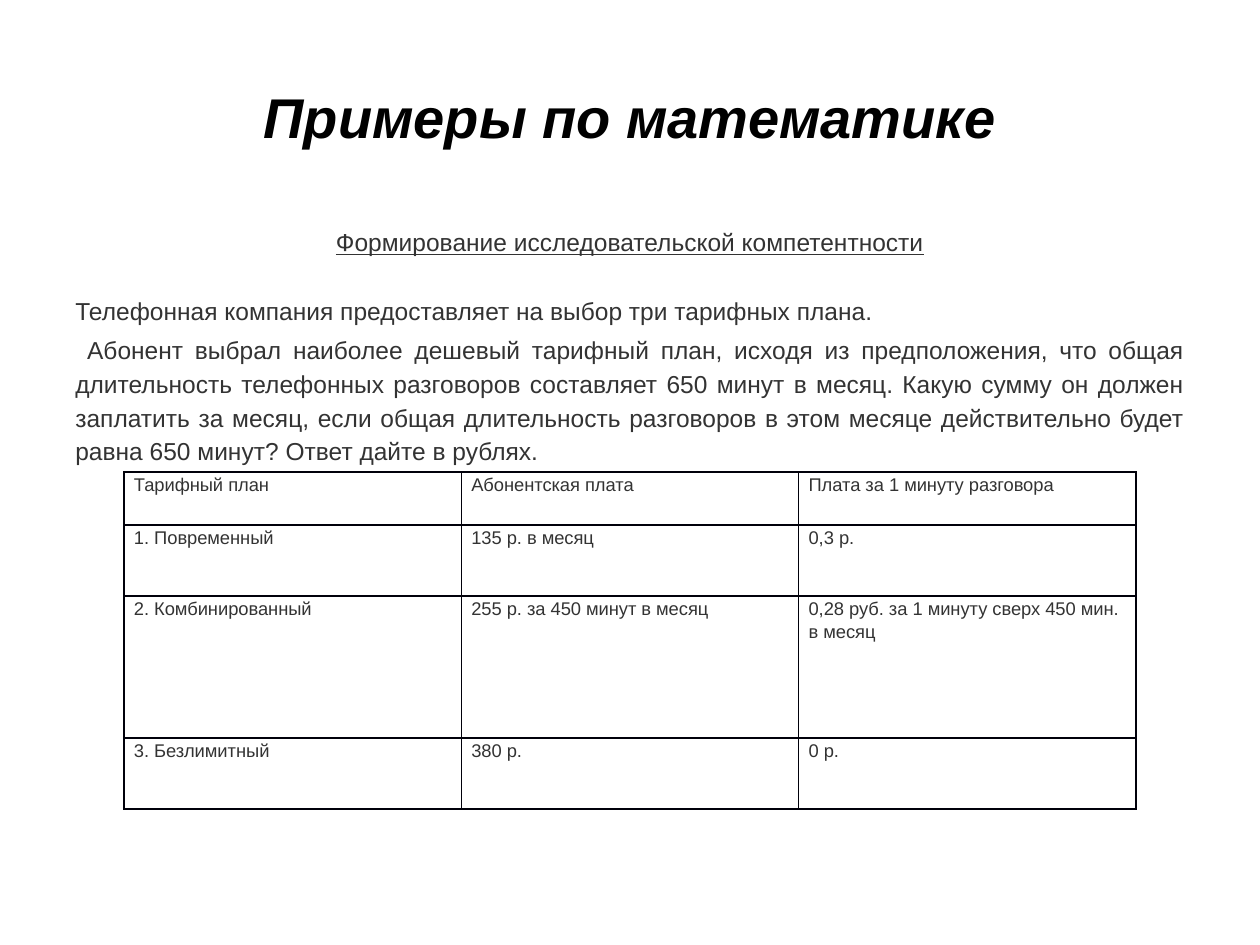
from lxml.etree import SubElement
from pptx import Presentation
from pptx.dml.color import RGBColor
from pptx.enum.text import MSO_ANCHOR, PP_ALIGN as AL
from pptx.oxml.ns import qn
from pptx.util import Pt

SCALE = 914400 / 126
FONT = "Arial"
COLORS = {"title": "000000", "text": "333333", "cell": "FFFFFF", "border": "00000A"}
SUBTITLE = "Формирование исследовательской компетентности"
INTRO = "Телефонная компания предоставляет на выбор три тарифных плана."
TASK = (
    " Абонент выбрал наиболее дешевый тарифный план, исходя из предположения, что общая "
    "длительность телефонных разговоров составляет 650 минут в месяц. Какую сумму он должен "
    "заплатить за месяц, если общая длительность разговоров в этом месяце действительно будет "
    "равна 650 минут? Ответ дайте в рублях."
)
TARIFFS = [
    ("Тарифный план", "Абонентская плата", "Плата за 1 минуту разговора"),
    ("1. Повременный", "135 р. в месяц", "0,3 р."),
    ("2. Комбинированный", "255 р. за 450 минут в месяц",
     "0,28 руб. за 1 минуту сверх 450 мин. в месяц"),
    ("3. Безлимитный", "380 р.", "0 р."),
]
ROW_HEIGHTS = [53, 71, 142, 71]


def px(n):
    """Convert pixels to EMU."""
    return round(n * SCALE)


def rgb(name):
    """Look up a palette colour."""
    return RGBColor.from_string(COLORS[name])


def add_run(p, text, size, color="text", **style):
    """Append a styled run to a paragraph."""
    r = p.add_run()
    r.text = text
    r.font.name, r.font.size = FONT, Pt(size)
    r.font.color.rgb = rgb(color)
    for key, value in style.items():
        setattr(r.font, key, value)


def set_spacing(p, before=0, after=0, line=1.0):
    """Set paragraph spacing in points and line spacing as a factor."""
    p.space_before, p.space_after, p.line_spacing = Pt(before), Pt(after), line


def add_box(s, x, y, w, h):
    """Add a wrapping text box and return its frame."""
    tf = s.shapes.add_textbox(px(x), px(y), px(w), px(h)).text_frame
    tf.word_wrap = True
    return tf


def add_title(s, x, y, w, h):
    """Place the centred heading."""
    tf = add_box(s, x, y, w, h)
    tf.vertical_anchor = MSO_ANCHOR.MIDDLE
    p = tf.paragraphs[0]
    p.alignment = AL.CENTER
    add_run(p, "Примеры по математике", 32, "title", bold=True, italic=True)


def add_problem(s, x, y, w, h):
    """Place the subtitle and the problem statement."""
    tf = add_box(s, x, y, w, h)
    p = tf.paragraphs[0]
    p.alignment = AL.CENTER
    add_run(p, SUBTITLE, 14, underline=True)
    for text, before, after, line in ((INTRO, 22.5, 0, 1.0), (TASK, 3, 7.5, 1.15)):
        p = tf.add_paragraph()
        p.alignment = AL.JUSTIFY
        set_spacing(p, before, after, line)
        add_run(p, text, 14)


def set_borders(cell):
    """Draw a thin line on all four sides of a cell."""
    tc_pr = cell._tc.get_or_add_tcPr()
    for i, side in enumerate(("lnL", "lnR", "lnT", "lnB")):
        ln = tc_pr.makeelement(qn(f"a:{side}"), {"w": str(Pt(1))})
        fill = SubElement(ln, qn("a:solidFill"))
        SubElement(fill, qn("a:srgbClr"), val=COLORS["border"])
        tc_pr.insert(i, ln)


def fill_cell(cell, text):
    """Write and style one table cell."""
    cell.fill.solid()
    cell.fill.fore_color.rgb = rgb("cell")
    cell.margin_left = cell.margin_right = px(10)
    cell.margin_top = cell.margin_bottom = 0
    p = cell.text_frame.paragraphs[0]
    set_spacing(p, after=7.5, line=1.15)
    add_run(p, text, 10.5)
    set_borders(cell)


def add_tariffs(s, x, y, w, h):
    """Place the tariff table with equal columns."""
    cols = len(TARIFFS[0])
    table = s.shapes.add_table(len(TARIFFS), cols, px(x), px(y), px(w), px(h)).table
    table.first_row = table.horz_banding = False
    for col in table.columns:
        col.width = px(w / cols)
    for row, height, texts in zip(table.rows, ROW_HEIGHTS, TARIFFS):
        row.height = px(height)
        for cell, text in zip(row.cells, texts):
            fill_cell(cell, text)


def main():
    """Build and save the slide."""
    prs = Presentation()
    prs.slide_width, prs.slide_height = px(1260), px(945)
    s = prs.slides.add_slide(prs.slide_layouts[6])
    add_title(s, 63, 38, 1134, 157)
    add_problem(s, 63, 221, 1134, 624)
    add_tariffs(s, 124, 472, 1012, sum(ROW_HEIGHTS))
    prs.save("out.pptx")


if __name__ == "__main__":
    main()
